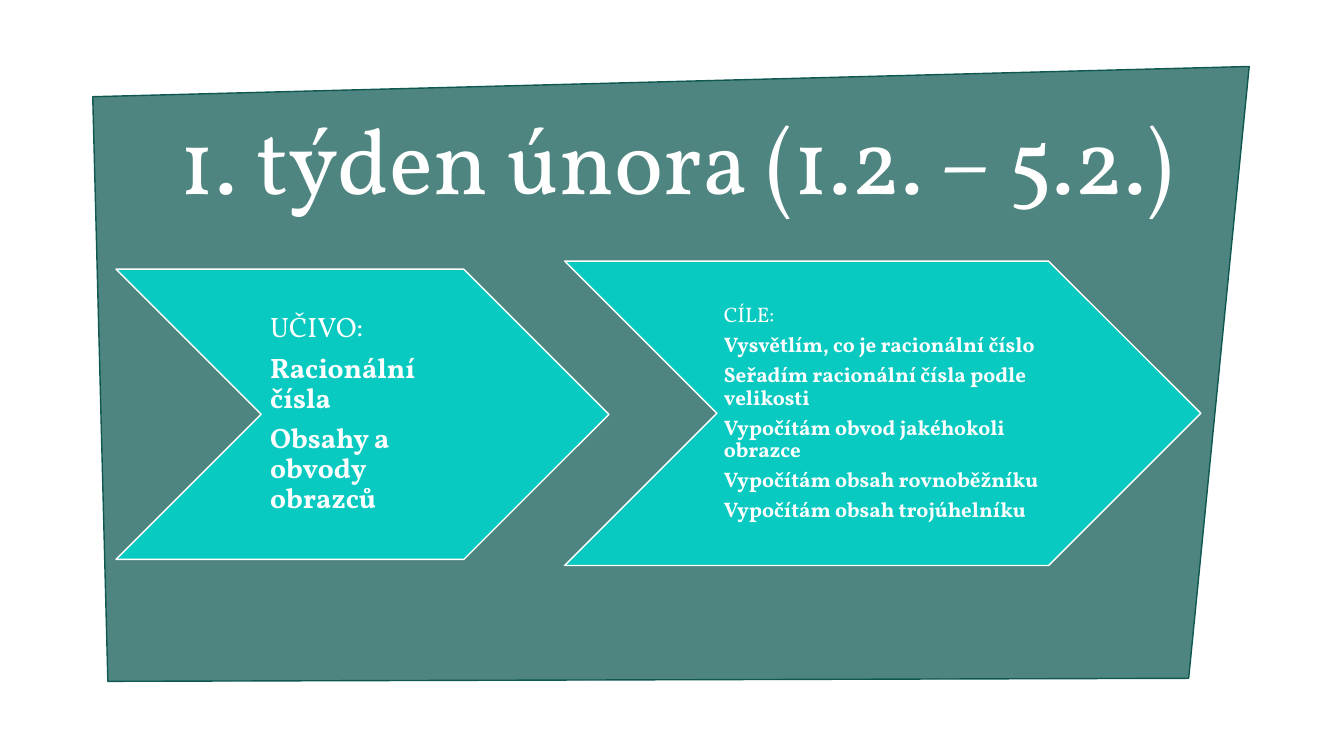
from lxml import etree
from pptx import Presentation, util as u
from pptx.dml.color import RGBColor
from pptx.enum import shapes, text
from pptx.oxml.ns import qn

FONT = "Vollkorn"
WHITE = "FFFFFF"
DARK = "0F5851"
TEAL = "08CAC1"


def tint(color, code):
    """Set a colour format to a hex colour."""
    color.rgb = RGBColor.from_string(code)


def paint(shape, fill, line):
    """Give a shape a flat fill and a one-point outline."""
    shape.shadow.inherit = False
    shape.fill.solid()
    tint(shape.fill.fore_color, fill)
    tint(shape.line.color, line)
    shape.line.width = u.Pt(1)


def style(para, size, bold=False):
    """Format a paragraph in the slide's white type."""
    para.line_spacing = 0.9
    para.font.name = FONT
    para.font.size = u.Pt(size)
    para.font.bold = bold
    tint(para.font.color, WHITE)


def panel(slide, points):
    """Draw the translucent slanted panel behind everything else."""
    spots = [(u.Inches(x), u.Inches(y)) for x, y in points]
    form = slide.shapes.build_freeform(*spots[0])
    form.add_line_segments(spots[1:], close=True)
    shape = form.convert_to_shape()
    paint(shape, DARK, DARK)
    code = shape.fill._xPr.find(qn("a:solidFill"))[0]
    etree.SubElement(code, qn("a:alpha"), val="73000")
    slide.shapes._spTree.insert(2, shape._element)


def title(slide, words, box):
    """Place the centred title in the given box."""
    head = slide.shapes.title
    head.left, head.top, head.width, head.height = map(u.Inches, box)
    frame = head.text_frame
    frame.text = words
    frame.word_wrap = True
    frame.auto_size = text.MSO_AUTO_SIZE.NONE
    frame.vertical_anchor = text.MSO_ANCHOR.BOTTOM
    para = frame.paragraphs[0]
    para.alignment = text.PP_ALIGN.CENTER
    style(para, 66)


def arrow(slide, box, size, inset, lines):
    """Draw a chevron with a heading and bold lines between its points."""
    left, top, wide, high = map(u.Inches, box)
    shape = slide.shapes.add_shape(
        shapes.MSO_SHAPE.CHEVRON, left, top, wide, high)
    paint(shape, TEAL, WHITE)
    label = slide.shapes.add_textbox(left + high // 2, top, wide - high, high)
    frame = label.text_frame
    frame.word_wrap = True
    frame.vertical_anchor = text.MSO_ANCHOR.MIDDLE
    frame.margin_left = u.Inches(inset)
    edge = u.Inches(inset / 3)
    frame.margin_top = frame.margin_right = frame.margin_bottom = edge
    frame.text = "\n".join(lines)
    for rank, para in enumerate(frame.paragraphs):
        para.alignment = text.PP_ALIGN.LEFT
        para.space_after = u.Pt(size * 0.35)
        style(para, size, rank > 0)


def main():
    """Build and save the slide."""
    deck = Presentation()
    deck.slide_width = u.Inches(13.33)
    deck.slide_height = u.Inches(7.5)
    slide = deck.slides.add_slide(deck.slide_layouts[5])
    panel(slide, [(1.07, 6.76), (0.92, 0.96), (12.39, 0.66), (11.79, 6.73)])
    title(slide, "1. týden února (1.2. – 5.2.)", (1, 1, 11.42, 1.18))
    arrow(slide, (1.15, 2.67, 4.89, 2.88), 20, 0.09, [
        "UČIVO:",
        "Racionální čísla",
        "Obsahy a obvody obrazců",
    ])
    arrow(slide, (5.6, 2.59, 6.31, 3.02), 15, 0.07, [
        "CÍLE:",
        "Vysvětlím, co je racionální číslo",
        "Seřadím racionální čísla podle velikosti",
        "Vypočítám obvod jakéhokoli obrazce",
        "Vypočítám obsah rovnoběžníku",
        "Vypočítám obsah trojúhelníku",
    ])
    deck.save("out.pptx")


if __name__ == "__main__":
    main()
